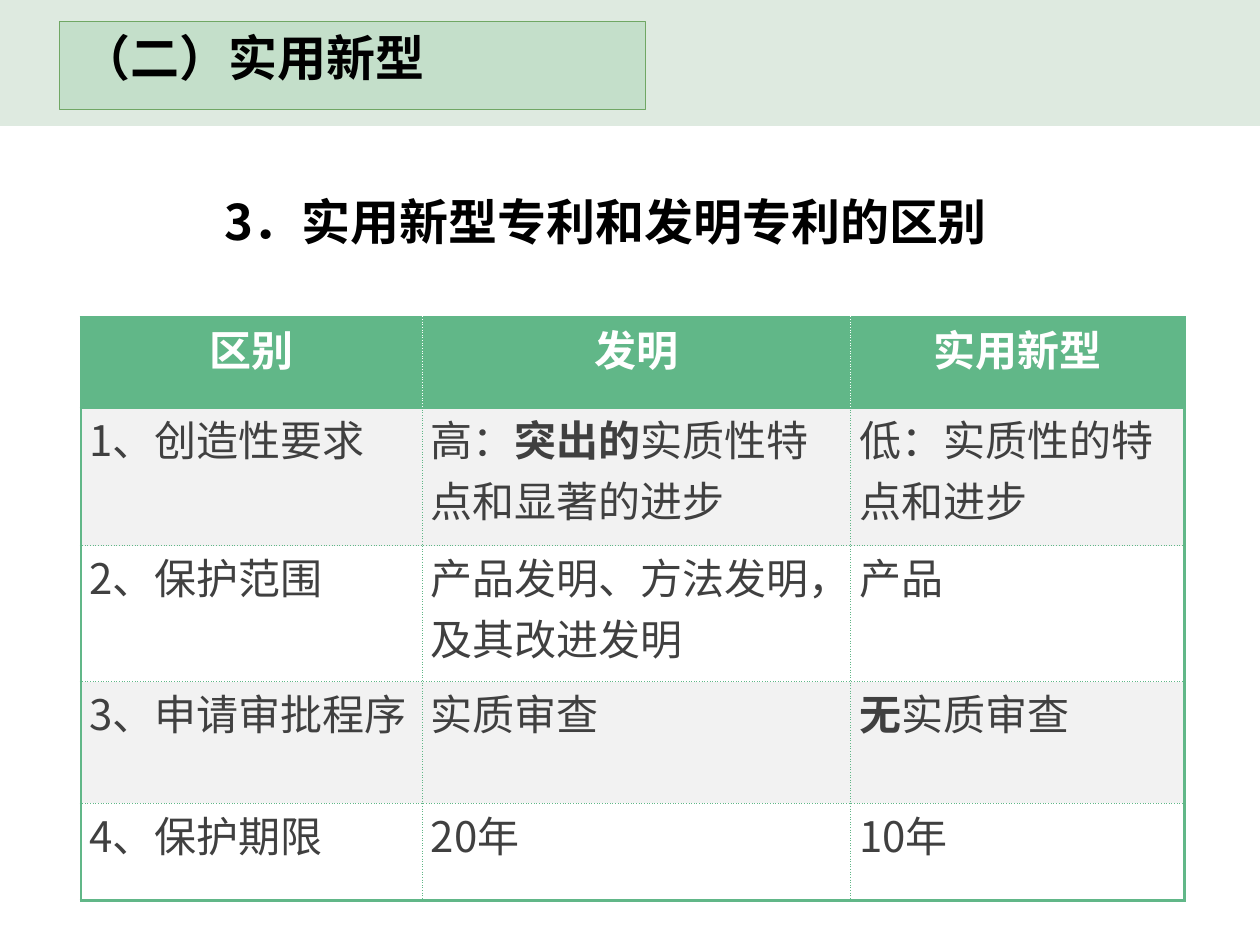
from lxml import etree
from pptx import Presentation
from pptx.dml.color import RGBColor
from pptx.enum import shapes, text
from pptx.oxml.ns import qn
from pptx.util import Inches, Pt

FONT = "Noto Sans CJK SC"
GREEN = "61B788"


def rgb(value):
    return RGBColor.from_string(value)


def style(r, size, color, bold):
    r.font.name, r.font.size, r.font.bold = FONT, Pt(size), bold
    r.font.color.rgb = rgb(color)
    ea = etree.SubElement(r._r.get_or_add_rPr(), qn("a:ea"))
    ea.set("typeface", FONT)


prs = Presentation()
prs.slide_width, prs.slide_height = Inches(10), Inches(7.5)
s = prs.slides.add_slide(prs.slide_layouts[5])
title = s.shapes.title

# Top band, behind the title
band = s.shapes.add_shape(shapes.MSO_SHAPE.RECTANGLE, 0, 0, Inches(10), Inches(1))
band.shadow.inherit = False
band.fill.solid()
band.fill.fore_color.rgb = rgb("DEEAE0")
band.line.fill.background()
title._element.addprevious(band._element)

# Title
title.left, title.top = Inches(0.47), Inches(0.17)
title.width, title.height = Inches(4.65), Inches(0.7)
title.fill.solid()
title.fill.fore_color.rgb = rgb("BEDDC5")
color = title._element.spPr.find(qn("a:solidFill"))[0]
etree.SubElement(color, qn("a:alpha")).set("val", "80000")
title.line.color.rgb = rgb("70A764")
title.line.width = Pt(0.5)
tf = title.text_frame
tf.text = "（二）实用新型"
tf.auto_size = text.MSO_AUTO_SIZE.NONE
tf.vertical_anchor = text.MSO_ANCHOR.TOP
tf.margin_left = Inches(0.18)
tf.paragraphs[0].alignment = text.PP_ALIGN.LEFT
style(tf.paragraphs[0].runs[0], 28, "000000", True)

# Comparison table: each cell is a list of (text, bold) runs
rows = [
    [[("区别", True)], [("发明", True)], [("实用新型", True)]],
    [[("1、创造性要求", False)],
     [("高：", False), ("突出的", True), ("实质性特点和显著的进步", False)],
     [("低：实质性的特点和进步", False)]],
    [[("2、保护范围", False)], [("产品发明、方法发明，及其改进发明", False)], [("产品", False)]],
    [[("3、申请审批程序", False)], [("实质审查", False)],
     [("无", True), ("实质审查", False)]],
    [[("4、保护期限", False)], [("20年", False)], [("10年", False)]],
]
widths = [2.71, 3.4, 2.65]
heights = [0.72, 1.09, 1.08, 0.67, 0.77]
table = s.shapes.add_table(len(rows), len(widths), Inches(0.64), Inches(2.52),
                           Inches(sum(widths)), Inches(sum(heights))).table
for column, width in zip(table.columns, widths):
    column.width = Inches(width)
for row, height in zip(table.rows, heights):
    row.height = Inches(height)

for i, row in enumerate(rows):
    header = i == 0
    for j, runs in enumerate(row):
        cell = table.cell(i, j)
        cell.margin_left = cell.margin_right = Inches(0.07)
        cell.margin_top = cell.margin_bottom = 0
        p = cell.text_frame.paragraphs[0]
        p.alignment = text.PP_ALIGN.CENTER if header else text.PP_ALIGN.LEFT
        for words, bold in runs:
            r = p.add_run()
            r.text = words
            style(r, 24, "FFFFFF" if header else "404040", bold)

        # Solid frame and header rule, dotted lines inside
        solid = {"L": j == 0, "R": j == len(widths) - 1,
                 "T": i <= 1, "B": header or i == len(rows) - 1}
        tcPr = cell._tc.get_or_add_tcPr()
        for side, is_solid in solid.items():
            ln = etree.SubElement(tcPr, qn("a:ln" + side))
            ln.set("w", str(Pt(1.5 if is_solid else 0.25)))
            fill = etree.SubElement(ln, qn("a:solidFill"))
            line_color = "FFFFFF" if header and not is_solid else GREEN
            etree.SubElement(fill, qn("a:srgbClr")).set("val", line_color)
            dash = etree.SubElement(ln, qn("a:prstDash"))
            dash.set("val", "solid" if is_solid else "sysDot")

        cell.fill.solid()
        cell.fill.fore_color.rgb = rgb(GREEN if header else "F2F2F2" if i % 2 else "FFFFFF")

# Heading above the table
heading = s.shapes.add_textbox(Inches(1.68), Inches(1.47), Inches(6.38), Inches(0.57))
tf = heading.text_frame
tf.word_wrap = True
tf.text = "3．实用新型专利和发明专利的区别"
style(tf.paragraphs[0].runs[0], 28, "000000", True)

prs.save("out.pptx")
